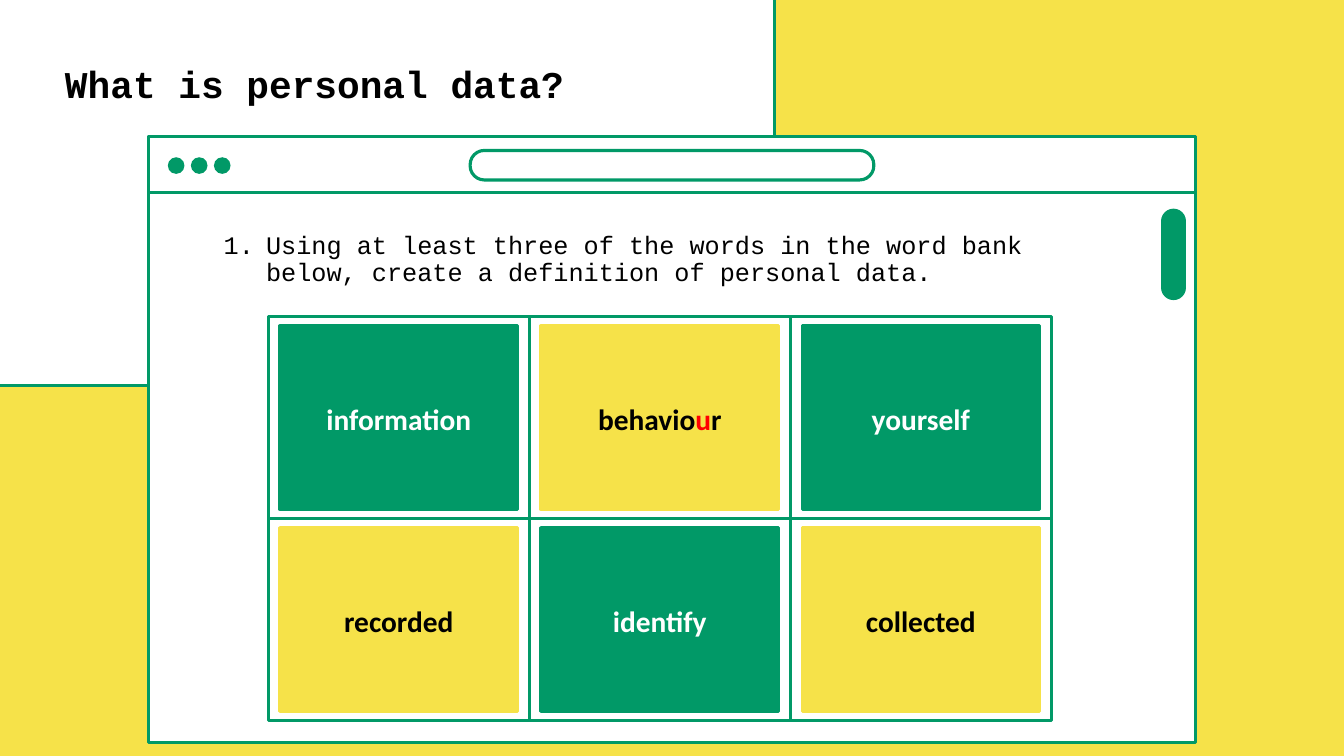
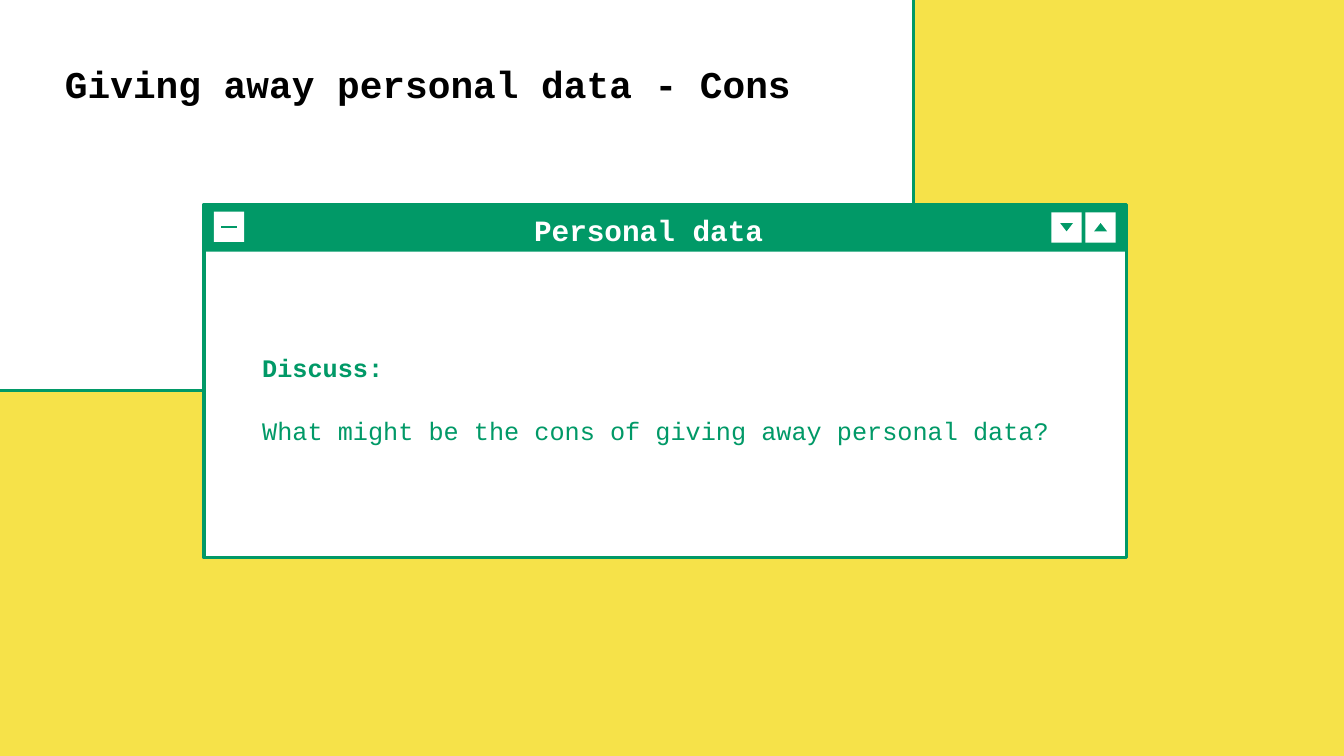
from lxml.etree import SubElement
from pptx import Presentation
from pptx.dml.color import RGBColor
from pptx.enum.shapes import MSO_CONNECTOR, MSO_SHAPE
from pptx.enum.text import MSO_ANCHOR, MSO_AUTO_SIZE, PP_ALIGN
from pptx.oxml.ns import qn
from pptx.util import Inches, Pt

COLOURS = {"green": "019967", "yellow": "F6E249", "white": "FFFFFF",
           "black": "000000", "red": "FF0000"}
MONO, SANS = "Courier New", "Calibri"
WIDE_INSETS = (0.13, 0.07, 0.13, 0.07)
TITLE_BOX = (0.76, 0.67, 12.49, 0.86)


def colour(name):
    return RGBColor.from_string(COLOURS[name])


def inches(box):
    return [Inches(value) for value in box]


def add_block(page, box, fill=None, line=None, kind=MSO_SHAPE.RECTANGLE,
              weight=3, radius=None, rotation=0):
    shape = page.shapes.add_shape(kind, *inches(box))
    shape.shadow.inherit = False
    shape.rotation = rotation
    if fill:
        shape.fill.solid()
        shape.fill.fore_color.rgb = colour(fill)
    else:
        shape.fill.background()
    if line:
        shape.line.color.rgb = colour(line)
        shape.line.width = Pt(weight)
    else:
        shape.line.fill.background()
    if radius is not None:
        shape.adjustments[0] = radius
    return shape


def write_text(shape, paragraphs, size=24, font=MONO, ink="black", bold=False,
               align=PP_ALIGN.LEFT, anchor=MSO_ANCHOR.TOP, spacing=None,
               before=0, gap=0, insets=(0.1, 0.05, 0.1, 0.05)):
    """Each paragraph is a list of (text, overrides) spans."""
    frame = shape.text_frame
    frame.word_wrap = True
    frame.auto_size = MSO_AUTO_SIZE.NONE
    frame.vertical_anchor = anchor
    (frame.margin_left, frame.margin_top,
     frame.margin_right, frame.margin_bottom) = inches(insets)
    for index, spans in enumerate(paragraphs):
        para = frame.add_paragraph() if index else frame.paragraphs[0]
        para.alignment = align
        para.space_before = Pt(gap if index else before)
        if spacing:
            para.line_spacing = spacing
        for text, overrides in spans:
            span = para.add_run()
            span.text = text
            span.font.name = font
            span.font.size = Pt(size)
            span.font.bold = overrides.get("bold", bold)
            span.font.color.rgb = colour(overrides.get("ink", ink))
    return frame


def add_text(page, box, paragraphs, **formatting):
    return write_text(page.shapes.add_textbox(*inches(box)), paragraphs, **formatting)


def number_paragraph(para, indent):
    properties = para._p.get_or_add_pPr()
    properties.set("marL", str(Inches(indent)))
    properties.set("indent", str(-Inches(indent)))
    SubElement(properties, qn("a:buFont"), typeface=MONO)
    SubElement(properties, qn("a:buAutoNum"), type="arabicPeriod")


def add_page(deck, title, panel):
    """Yellow page with a white corner panel and a title."""
    page = deck.slides.add_slide(deck.slide_layouts[5])
    page.background.fill.solid()
    page.background.fill.fore_color.rgb = colour("yellow")
    add_block(page, panel, "white", "green", weight=2.75)
    heading = page.shapes.title
    page.shapes._spTree.append(heading._element)  # in front of the panel
    heading.left, heading.top, heading.width, heading.height = inches(TITLE_BOX)
    write_text(heading, [[(title, {})]], size=36, bold=True, anchor=MSO_ANCHOR.MIDDLE)
    return page


def add_browser(page, box):
    left, top, width, height = box
    add_block(page, box, "white", "green")
    add_block(page, (left, top, width, 0.74), "white", "green")
    # Scroll bar, window buttons and address bar
    add_block(page, (left + width - 0.46, top + 0.95, 0.33, 1.21), "green",
              kind=MSO_SHAPE.ROUNDED_RECTANGLE, radius=0.5)
    for index in range(3):
        add_block(page, (left + 0.26 + index * 0.305, top + 0.27, 0.22, 0.22),
                  "green", kind=MSO_SHAPE.OVAL)
    add_block(page, (left + 4.26, top + 0.18, 5.34, 0.39), line="green",
              kind=MSO_SHAPE.ROUNDED_RECTANGLE, radius=0.48)


def add_word_bank(page, box, words, columns=3):
    left, top, width, height = box
    cell_width = width / columns
    cell_height = height / (len(words) // columns)
    for index, spans in enumerate(words):
        row, column = divmod(index, columns)
        x, y = left + column * cell_width, top + row * cell_height
        fill, ink = ("yellow", "black") if index % 2 else ("green", "white")
        add_block(page, (x, y, cell_width, cell_height), "white", "green")
        add_block(page, (x + 0.155, y + 0.12, 3.14, 2.43), fill, fill)
        add_text(page, (x + 0.155, y + 1.02, 3.14, 0.67), [spans], size=28,
                 font=SANS, ink=ink, bold=True, align=PP_ALIGN.CENTER,
                 anchor=MSO_ANCHOR.MIDDLE, insets=WIDE_INSETS)


def add_dialog(page, box, caption, paragraphs):
    left, top, width, height = box
    add_block(page, box, "white", "green")
    add_block(page, (left, top, width, 0.63), "green")
    add_text(page, (left + 0.57, top + 0.09, 10.62, 0.55), [[(caption, {})]],
             size=28, ink="white", bold=True, align=PP_ALIGN.CENTER,
             anchor=MSO_ANCHOR.MIDDLE, spacing=0.9, before=12)
    # Minimise button
    add_block(page, (left + 0.13, top + 0.1, 0.4, 0.4), "white")
    dash = page.shapes.add_connector(
        MSO_CONNECTOR.STRAIGHT,
        *inches((left + 0.23, top + 0.3, left + 0.43, top + 0.3)))
    dash.line.color.rgb = colour("green")
    dash.line.width = Pt(2.25)
    SubElement(dash._element.spPr, qn("a:effectLst"))
    # Down and up buttons
    for offset, rotation in ((11.21, 180), (11.66, 0)):
        add_block(page, (left + offset, top + 0.11, 0.4, 0.4), "white")
        add_block(page, (left + offset + 0.115, top + 0.25, 0.17, 0.11), "green",
                  kind=MSO_SHAPE.ISOSCELES_TRIANGLE, rotation=rotation)
    add_text(page, (left + 0.67, top + 1.88, 11.01, 1.85), paragraphs,
             ink="green", spacing=1.07, gap=29)


def build_definition_page(deck):
    page = add_page(deck, "What is personal data?", (-0.64, -0.25, 10.89, 5.35))
    add_browser(page, (1.96, 1.81, 13.86, 8.01))
    words = [
        [("information", {})],
        [("behavio", {}), ("u", {"ink": "red"}), ("r", {})],
        [("yourself", {})],
        [("recorded", {})],
        [("identify", {})],
        [("collected", {})],
    ]
    add_word_bank(page, (3.55, 4.19, 10.36, 5.34), words)
    task = ("Using at least three of the words in the word bank below, "
            "create a definition of personal data.")
    frame = add_text(page, (2.83, 3.1, 12.11, 0.67), [[(task, {})]], spacing=0.9,
                     anchor=MSO_ANCHOR.MIDDLE, insets=WIDE_INSETS)
    number_paragraph(frame.paragraphs[0], 0.56)


def build_cons_page(deck):
    page = add_page(deck, "Giving away personal data - Cons",
                    (-0.25, -0.22, 12.33, 5.39))
    add_dialog(page, (2.7, 2.7, 12.2, 4.68), "Personal data", [
        [("Discuss:", {"bold": True})],
        [("What might be the cons of giving away personal data?", {})],
    ])


def main():
    deck = Presentation()
    deck.slide_width, deck.slide_height = Inches(17.78), Inches(10)
    build_definition_page(deck)
    build_cons_page(deck)
    deck.save("out.pptx")


if __name__ == "__main__":
    main()
